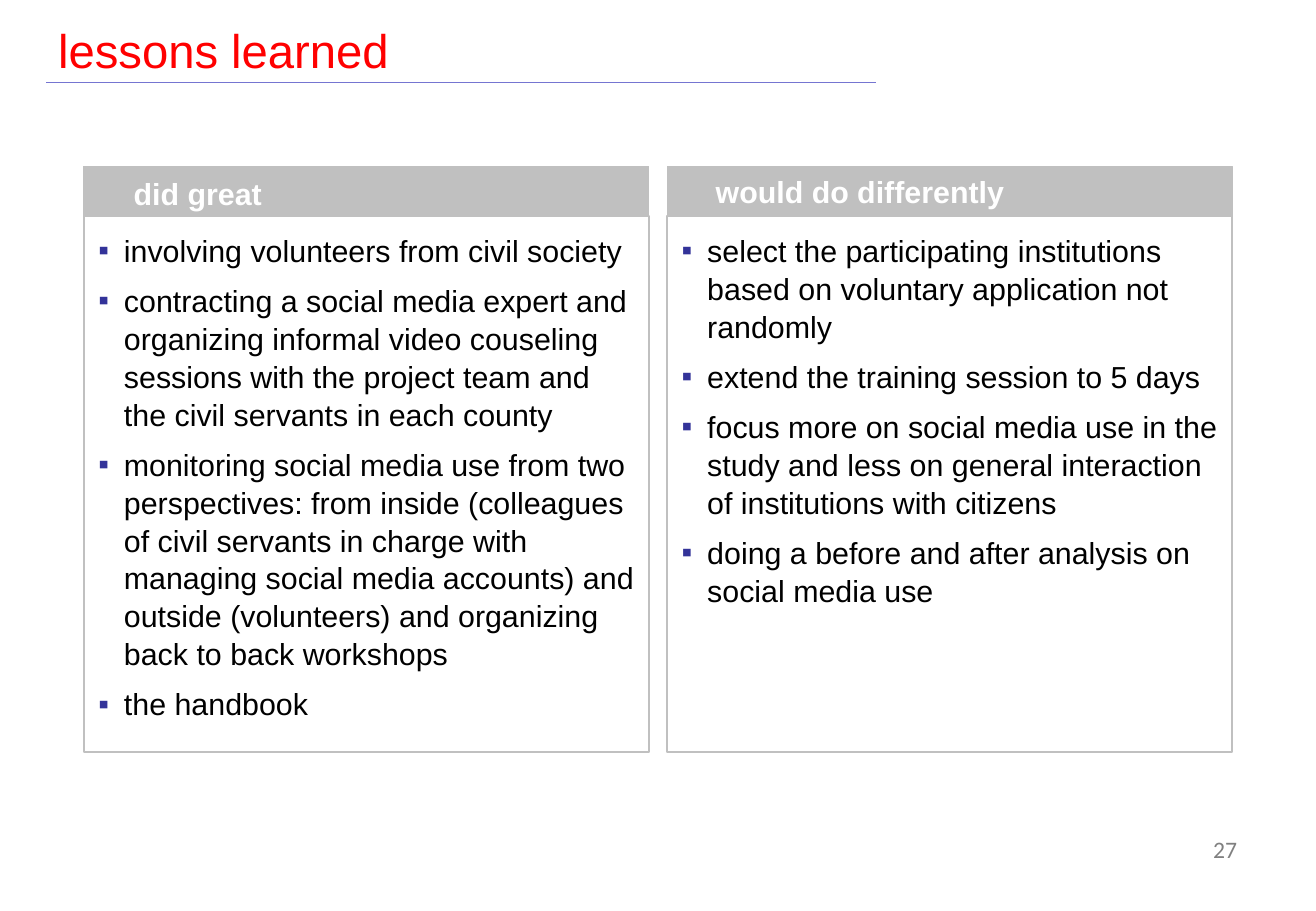
from lxml import etree
from pptx import Presentation
from pptx import util as u
from pptx.dml.color import RGBColor
from pptx.enum import shapes, text
from pptx.oxml.ns import qn

TITLE = "lessons learned"
PAGE_NUMBER = "27"
# heading, (heading indent, heading drop), bullet points
COLUMNS = [
    ("did great", (0.41, 0.02), [
        "involving volunteers from civil society",
        "contracting a social media expert and organizing informal video couseling "
        "sessions with the project team and the civil servants in each county",
        "monitoring social media use from two perspectives: from inside (colleagues of "
        "civil servants in charge with managing social media accounts) and outside "
        "(volunteers) and organizing back to back workshops",
        "the handbook",
    ]),
    ("would do differently", (0.4, 0), [
        "select the participating institutions based on voluntary application not randomly",
        "extend the training session to 5 days",
        "focus more on social media use in the study and less on general interaction "
        "of institutions with citizens",
        "doing a before and after analysis on social media use",
    ]),
]
COLORS = {"title": "FF0000", "rule": "7575D1", "panel": "C0C0C0", "heading": "FFFFFF",
          "body": "000000", "bullet": "333399", "number": "808080"}
FORMATS = {
    "title": {"size": u.Pt(28), "name": "Arial"},
    "heading": {"size": u.Pt(18), "name": "Arial", "bold": True},
    "body": {"size": u.Pt(18), "name": "Arial"},
    "number": {"size": u.Pt(14), "name": "Calibri"},
}
SLIDE_WIDTH, SLIDE_HEIGHT = 10.83, 7.5
GRID_LEFT, GRID_TOP = 0.69, 1.37
COLUMN_WIDTH, COLUMN_STEP = 4.65, 4.8
HEADING_HEIGHT, BODY_HEIGHT = 0.41, 4.41
RULE_LEFT, RULE_RIGHT, RULE_TOP = 0.38, 7.21, 0.68
BULLET_INDENT = u.Inches(0.21)


def color(name):
    return RGBColor.from_string(COLORS[name])


def inches(*lengths):
    return [u.Inches(length) for length in lengths]


def write(para, words, style):
    span = para.add_run()
    span.text = words
    for key, value in FORMATS[style].items():
        setattr(span.font, key, value)
    span.font.color.rgb = color(style)


def set_frame(frame, anchor, margins):
    frame.word_wrap = True
    frame.vertical_anchor = anchor
    for side, margin in zip(("left", "top", "right", "bottom"), margins):
        setattr(frame, f"margin_{side}", u.Inches(margin))


def add_label(place, words, style, anchor, margins=(0.1, 0.05, 0.1, 0.05)):
    box = slide.shapes.add_textbox(*inches(*place))
    set_frame(box.text_frame, anchor, margins)
    para = box.text_frame.paragraphs[0]
    write(para, words, style)
    return para


def add_panel(place, line_width, filled):
    panel = slide.shapes.add_shape(shapes.MSO_SHAPE.RECTANGLE, *inches(*place))
    panel.shadow.inherit = False
    panel.line.color.rgb = color("panel")
    panel.line.width = u.Pt(line_width)
    if filled:
        panel.fill.solid()
        panel.fill.fore_color.rgb = color("panel")
    else:
        panel.fill.background()
    return panel


def add_bullet(para):
    props = para._p.get_or_add_pPr()
    props.set("marL", str(BULLET_INDENT))
    props.set("indent", str(-BULLET_INDENT))
    tint = etree.SubElement(props, qn("a:buClr"))
    etree.SubElement(tint, qn("a:srgbClr"), val=COLORS["bullet"])
    etree.SubElement(props, qn("a:buFont"), typeface="Arial")
    etree.SubElement(props, qn("a:buChar"), char="▪")


def add_column(left, heading, offset, points):
    indent, drop = offset
    add_panel((left, GRID_TOP, COLUMN_WIDTH, HEADING_HEIGHT), 0.75, True)
    add_label((left + indent, GRID_TOP + drop, COLUMN_WIDTH - indent, HEADING_HEIGHT),
              heading, "heading", text.MSO_ANCHOR.MIDDLE, (0, 0, 0, 0))
    body = add_panel((left, GRID_TOP + HEADING_HEIGHT, COLUMN_WIDTH, BODY_HEIGHT), 1, False)
    frame = body.text_frame
    set_frame(frame, text.MSO_ANCHOR.TOP, (0.12, 0.12, 0.08, 0.08))
    for number, point in enumerate(points):
        para = frame.add_paragraph() if number else frame.paragraphs[0]
        add_bullet(para)
        para.alignment = text.PP_ALIGN.LEFT
        para.line_spacing = 1.04
        para.space_before = u.Pt(7.2 if number else 0)
        write(para, point, "body")


deck = Presentation()
deck.slide_width, deck.slide_height = inches(SLIDE_WIDTH, SLIDE_HEIGHT)
slide = deck.slides.add_slide(deck.slide_layouts[6])

rule = slide.shapes.add_connector(shapes.MSO_CONNECTOR.STRAIGHT,
                                  *inches(RULE_LEFT, RULE_TOP, RULE_RIGHT, RULE_TOP))
rule.line.color.rgb = color("rule")
rule.line.width = u.Pt(0.75)
etree.SubElement(rule._element.spPr, qn("a:effectLst"))

add_label((RULE_LEFT, 0.13, RULE_RIGHT - RULE_LEFT, 0.55), TITLE, "title",
          text.MSO_ANCHOR.MIDDLE)
for index, (heading, offset, points) in enumerate(COLUMNS):
    add_column(GRID_LEFT + index * COLUMN_STEP, heading, offset, points)
page_label = add_label((9.51, 6.82, 0.77, 0.55), PAGE_NUMBER, "number", text.MSO_ANCHOR.TOP)
page_label.alignment = text.PP_ALIGN.RIGHT

deck.save("out.pptx")
